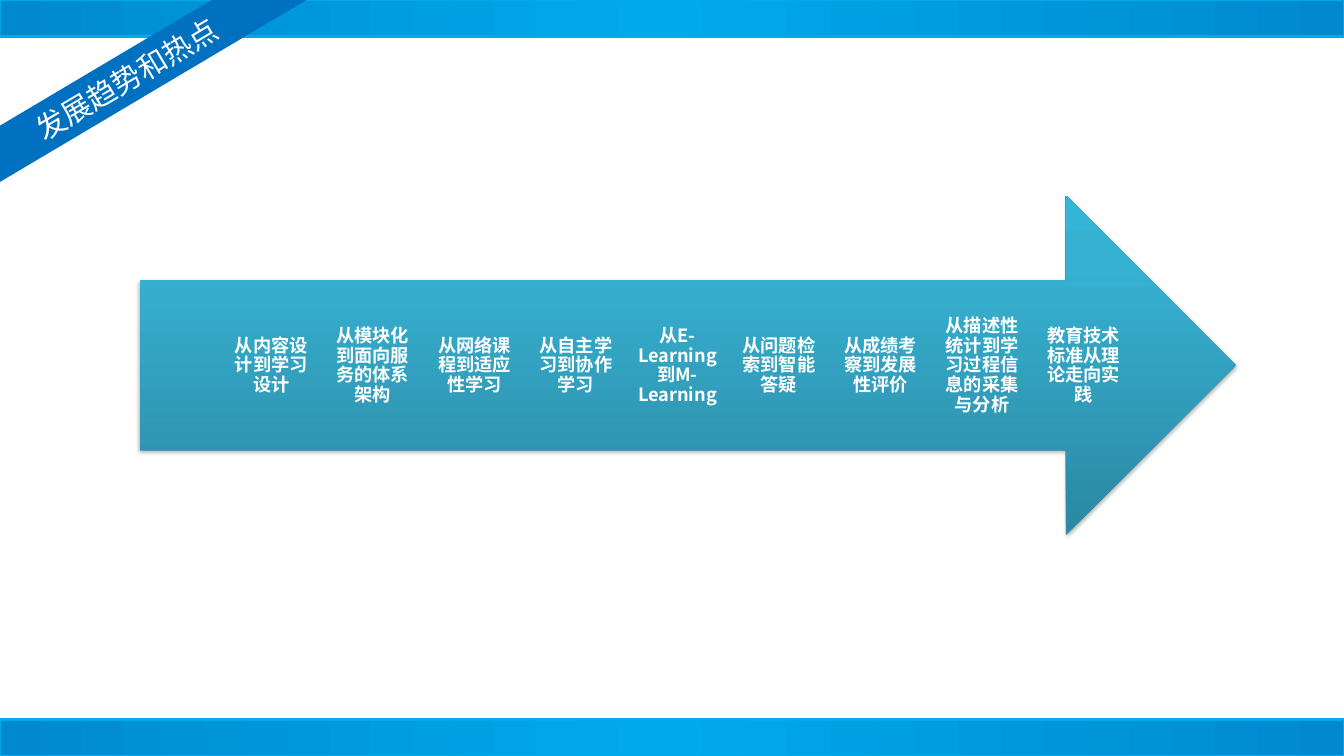
import pptx
import pptx.util
import pptx.dml.color
import pptx.enum.shapes
import pptx.enum.text
import pptx.oxml
import pptx.oxml.ns
import lxml.etree

Pt = pptx.util.Pt
RGB = pptx.dml.color.RGBColor.from_string
SHAPES = pptx.enum.shapes.MSO_SHAPE
qn = pptx.oxml.ns.qn

FONT = "Noto Sans CJK SC"
COLORS = {
    "white": "FFFFFF",
    "ribbon": "0070C0",
    "band_edge": "0089CF",
    "band_middle": "00AAEC",
    "arrow_dark": "2A88A2",
    "arrow_mid": "37B1D2",
    "arrow_light": "34B4D6",
    "shadow": "000000",
}
TRENDS = [
    "从内容设计到学习设计",
    "从模块化到面向服务的体系架构",
    "从网络课程到适应性学习",
    "从自主学习到协作学习",
    "从E-Learning到M-Learning",
    "从问题检索到智能答疑",
    "从成绩考察到发展性评价",
    "从描述性统计到学习过程信息的采集与分析",
    "教育技术标准从理论走向实践",
]


def fill_gradient(shape, stops, angle):
    shape.fill.gradient()
    shape.fill.gradient_angle = angle
    stop_list = shape.element.spPr.find(qn("a:gradFill")).find(qn("a:gsLst"))
    for stop in list(stop_list):
        stop_list.remove(stop)
    for position, name in stops:
        stop = lxml.etree.SubElement(stop_list, qn("a:gs"), pos=str(position * 1000))
        lxml.etree.SubElement(stop, qn("a:srgbClr"), val=COLORS[name])


def write_text(shape, text, size, bold, margin_x, margin_y):
    frame = shape.text_frame
    frame.word_wrap = True
    frame.vertical_anchor = pptx.enum.text.MSO_ANCHOR.MIDDLE
    frame.margin_left = frame.margin_right = Pt(margin_x)
    frame.margin_top = frame.margin_bottom = Pt(margin_y)
    paragraph = frame.paragraphs[0]
    paragraph.alignment = pptx.enum.text.PP_ALIGN.CENTER
    run = paragraph.add_run()
    run.text = text
    run.font.size = Pt(size)
    run.font.bold = bold
    run.font.name = FONT
    run.font.color.rgb = RGB(COLORS["white"])
    lxml.etree.SubElement(run.font._element, qn("a:ea"), typeface=FONT)
    return paragraph


presentation = pptx.Presentation()
presentation.slide_width = Pt(960)
presentation.slide_height = Pt(540)
slide = presentation.slides.add_slide(presentation.slide_layouts[6])

band_height = 26
for band_top in (0, 540 - band_height):
    band = slide.shapes.add_shape(SHAPES.RECTANGLE, Pt(0), Pt(band_top), Pt(960), Pt(band_height))
    band.shadow.inherit = False
    fill_gradient(band, [(0, "band_edge"), (49, "band_middle"), (100, "band_edge")], 0)
    band.line.color.rgb = RGB(COLORS["band_middle"])
    band.line.width = Pt(2)

ribbon = slide.shapes.add_shape(SHAPES.RECTANGLE, Pt(-75.6), Pt(38.9), Pt(331.9), Pt(34.6))
ribbon.rotation = 329.3
ribbon.shadow.inherit = False
ribbon.fill.solid()
ribbon.fill.fore_color.rgb = RGB(COLORS["ribbon"])
ribbon.line.fill.background()
write_text(ribbon, "发展趋势和热点", 21, False, 9.4, 4.3)

arrow = slide.shapes.add_shape(SHAPES.RIGHT_ARROW, Pt(100), Pt(139.7), Pt(782.7), Pt(242.6))
fill_gradient(arrow, [(0, "arrow_dark"), (80, "arrow_mid"), (100, "arrow_light")], 90)
arrow.line.fill.background()
arrow.shadow.inherit = False
shadow = lxml.etree.SubElement(
    arrow.element.spPr.find(qn("a:effectLst")), qn("a:outerShdw"),
    blurRad=str(Pt(3.1)), dist=str(Pt(1.8)), dir="5400000", rotWithShape="0")
shadow_color = lxml.etree.SubElement(shadow, qn("a:srgbClr"), val=COLORS["shadow"])
lxml.etree.SubElement(shadow_color, qn("a:alpha"), val="35000")

for index, trend in enumerate(TRENDS):
    label = slide.shapes.add_textbox(Pt(163.5 + index * 72.54), Pt(200.9), Pt(60.5), Pt(121))
    paragraph = write_text(label, trend, 13, True, 0, 10)
    paragraph.line_spacing = 0.9
    paragraph.space_after = Pt(4.5)

presentation.save("out.pptx")
